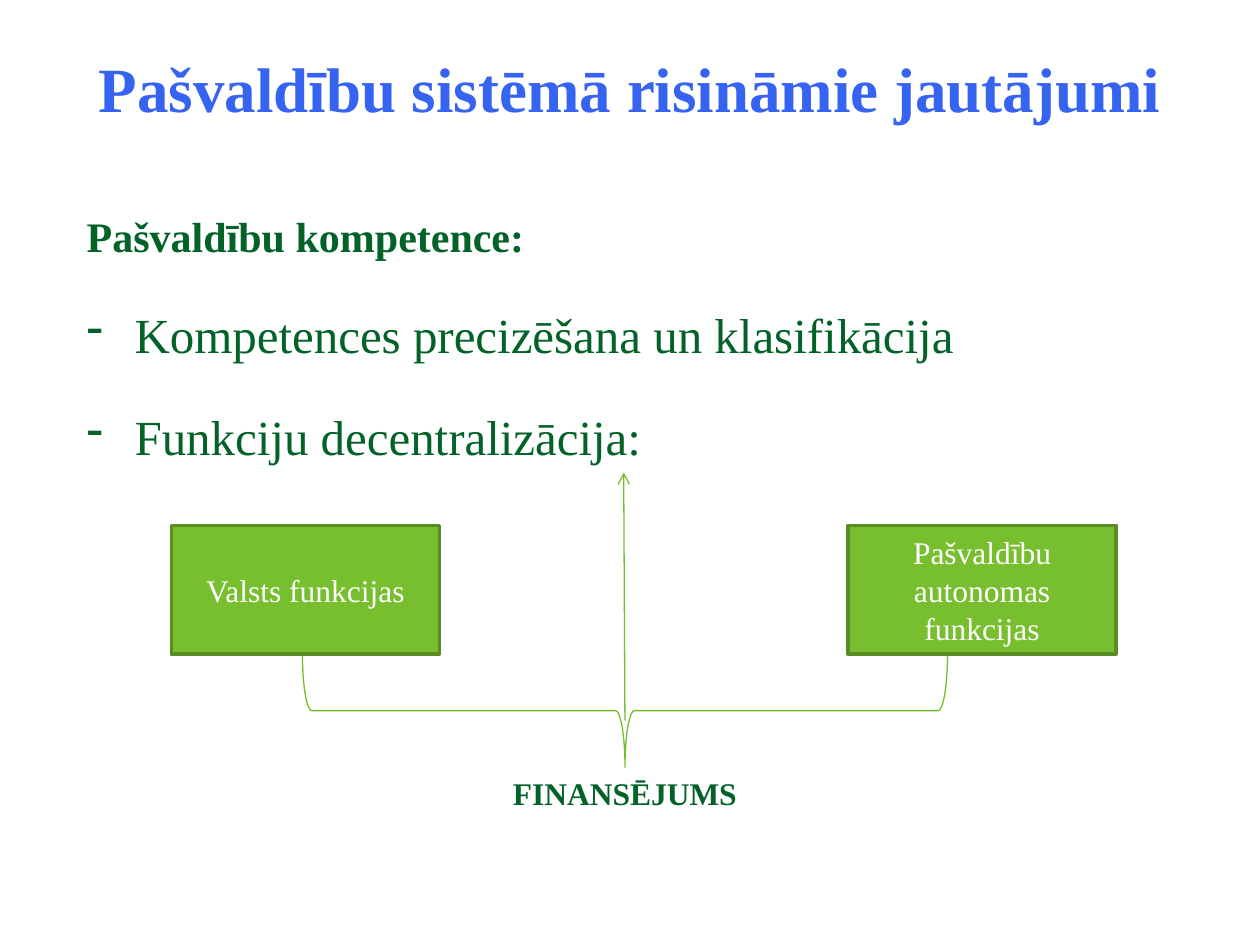
from lxml import etree
from pptx import Presentation
from pptx import util as u
from pptx.dml.color import RGBColor
from pptx.enum import shapes, text
from pptx.oxml.ns import qn

COLUMNS, ROWS = 100, 75


def paint(target, color):
    if hasattr(target, "solid"):
        target.solid()
        target = target.fore_color
        target.rgb = RGBColor.from_string(color)
    else:
        target.rgb = RGBColor.from_string(color)


def write(para, words, font="Times New Roman", size=18, color="026227", bold=False,
          align=text.PP_ALIGN.LEFT, spacing=None, before=None):
    para.alignment = align
    para.line_spacing = spacing
    para.space_before = before
    span = para.add_run()
    span.text = words
    span.font.name = font
    span.font.size = u.Pt(size)
    span.font.bold = bold
    paint(span.font.color, color)


class Page:
    green, edge, stroke = "78BF30", "598D24", "75BE2B"
    center = text.PP_ALIGN.CENTER

    def __init__(self, deck):
        self.deck = deck
        self.shapes = deck.slides.add_slide(deck.slide_layouts[6]).shapes

    def place(self, left, top, width, height):
        return self.point(left, top) + self.point(width, height)

    def point(self, column, row):
        return (round(self.deck.slide_width * column / COLUMNS),
                round(self.deck.slide_height * row / ROWS))

    def text_box(self, *area, inset=0.05):
        frame = self.shapes.add_textbox(*self.place(*area)).text_frame
        frame.word_wrap = True
        frame.margin_top = u.Inches(inset)
        return frame

    def label(self, words, *area, inset=0.05, **style):
        frame = self.text_box(*area, inset=inset)
        write(frame.paragraphs[0], words, align=self.center, bold=True, **style)

    def topics(self, heading, items, *area):
        frame = self.text_box(*area, inset=0.08)
        write(frame.paragraphs[0], heading, size=24, bold=True, spacing=1.5)
        for item in items:
            para = frame.add_paragraph()
            props = para._p.get_or_add_pPr()
            indent = u.Inches(0.38)
            props.set("marL", str(indent))
            props.set("indent", str(-indent))
            etree.SubElement(props, qn("a:buChar"), char="-")
            write(para, item, size=28, spacing=1.5, before=u.Pt(8))

    def outline(self, shape, color, width):
        paint(shape.line.fill, color)
        shape.line.width = u.Pt(width)

    def block(self, words, *area):
        box = self.shapes.add_shape(shapes.MSO_SHAPE.RECTANGLE, *self.place(*area))
        box.shadow.inherit = False
        paint(box.fill, self.green)
        self.outline(box, self.edge, 2)
        box.text_frame.word_wrap = True
        box.text_frame.vertical_anchor = text.MSO_ANCHOR.MIDDLE
        write(box.text_frame.paragraphs[0], words, color="FFFFFF", align=self.center)

    def brace(self, *area):
        brace = self.shapes.add_shape(shapes.MSO_SHAPE.RIGHT_BRACE, *self.place(*area))
        brace.rotation = 90
        brace.shadow.inherit = False
        brace.fill.background()
        self.outline(brace, self.stroke, 0.75)

    def arrow(self, start, end):
        arrow = self.shapes.add_connector(
            shapes.MSO_CONNECTOR.STRAIGHT, *self.point(*start), *self.point(*end))
        self.outline(arrow, self.stroke, 0.75)
        etree.SubElement(arrow.line._get_or_add_ln(), qn("a:tailEnd"), type="arrow")
        etree.SubElement(arrow._element.spPr, qn("a:effectLst"))


def main():
    deck = Presentation()
    deck.slide_width, deck.slide_height = u.Inches(10), u.Inches(7.5)
    page = Page(deck)
    page.topics("Pašvaldību kompetence:",
                ["Kompetences precizēšana un klasifikācija", "Funkciju decentralizācija:"],
                5.9, 13.9, 90, 52.8)
    page.label("Pašvaldību sistēmā risināmie jautājumi", 0, 2.9, 100, 10.2,
               inset=0.1, size=36, color="3763F1")
    page.brace(45.1, 30.8, 9, 51.2)
    for words, left in (("Valsts funkcijas", 13.6),
                        ("Pašvaldību autonomas funkcijas", 67.3)):
        page.block(words, left, 41.7, 21.3, 10.2)
    page.arrow((49.6, 57.2), (49.5, 37.5))
    page.label("FINANSĒJUMS", 36.6, 60.9, 26, 4)
    deck.save("out.pptx")


if __name__ == "__main__":
    main()
